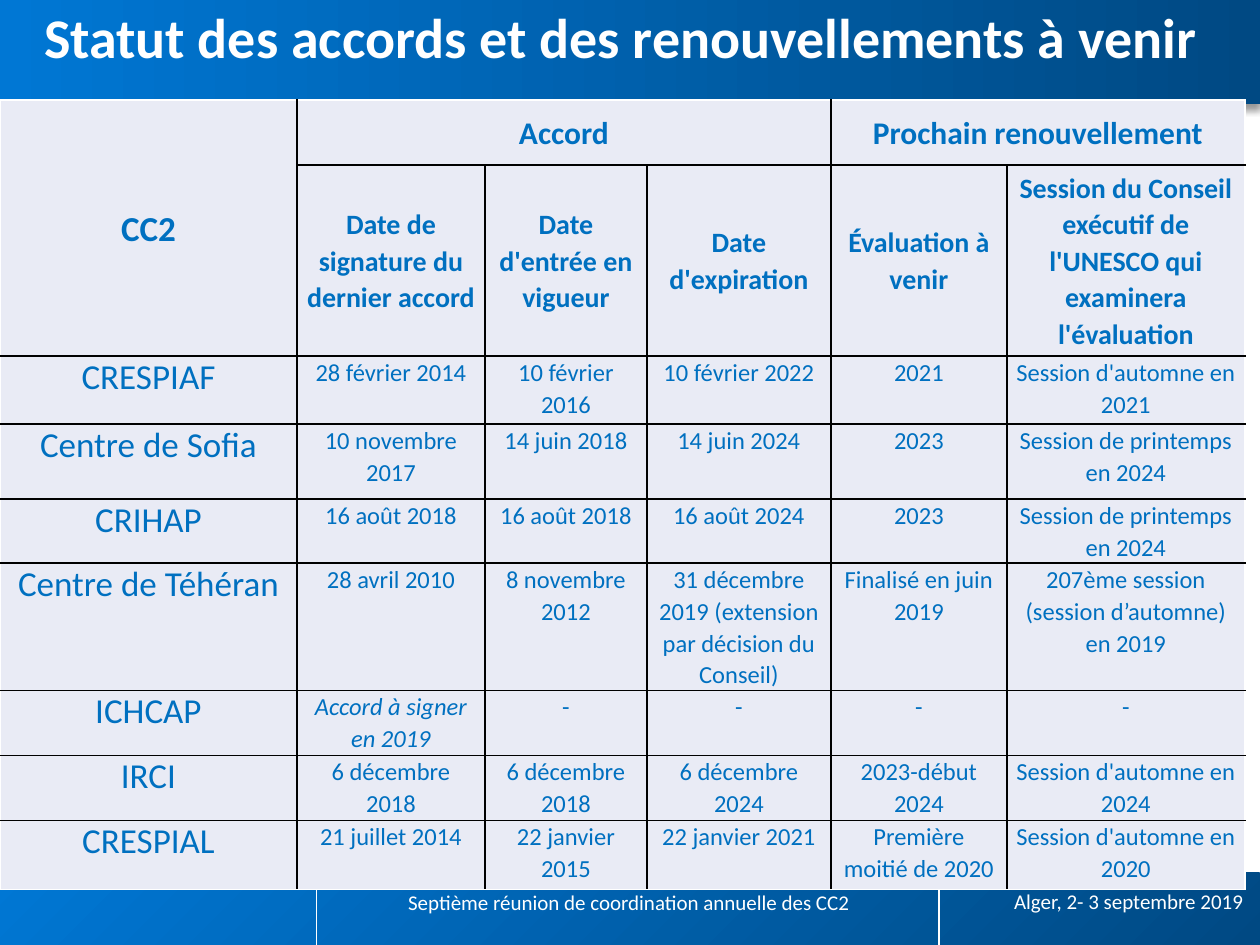
"""Build the slide on the status of agreements and coming renewals."""
from lxml import etree
from pptx import Presentation
from pptx.dml.color import RGBColor
from pptx.enum.shapes import MSO_CONNECTOR as Connector, MSO_SHAPE as Shape
from pptx.enum.text import MSO_ANCHOR as Anchor, MSO_AUTO_SIZE as AutoSize, PP_ALIGN as Align
from pptx.oxml import parse_xml
from pptx.oxml.ns import nsdecls, qn
from pptx.util import Pt

PX = 914400 // 126
FONT = "Calibri"
WHITE = RGBColor(0xFF, 0xFF, 0xFF)
BLACK = RGBColor(0x00, 0x00, 0x00)
BRIGHT_BLUE = RGBColor(0x00, 0x77, 0xD4)
DARK_BLUE = RGBColor(0x00, 0x49, 0x83)
TEXT_BLUE = RGBColor(0x00, 0x70, 0xC0)
CELL_FILL = RGBColor(0xE9, 0xEB, 0xF5)

COLUMN_WIDTHS = [297, 188, 162, 184, 176, 238]
ROW_HEIGHTS = [65, 191, 68, 75, 64, 127, 65, 65, 69]
ROWS = [
    ["CC2", "Accord", "", "", "Prochain renouvellement", ""],
    ["", "Date de signature du dernier accord", "Date d'entrée en vigueur", "Date d'expiration",
     "Évaluation à venir", "Session du Conseil exécutif de l'UNESCO qui examinera l'évaluation"],
    ["CRESPIAF", "28 février 2014", "10 février 2016", "10 février 2022", "2021",
     "Session d'automne en 2021"],
    ["Centre de Sofia", "10 novembre 2017", "14 juin 2018", "14 juin 2024", "2023",
     "Session de printemps en 2024"],
    ["CRIHAP", "16 août 2018", "16 août 2018", "16 août 2024", "2023",
     "Session de printemps en 2024"],
    ["Centre de Téhéran", "28 avril 2010", "8 novembre 2012",
     "31 décembre 2019 (extension par décision du Conseil)", "Finalisé en juin 2019",
     "207ème session (session d’automne) en 2019"],
    ["ICHCAP", "Accord à signer en 2019", "-", "-", "-", "-"],
    ["IRCI", "6 décembre 2018", "6 décembre 2018", "6 décembre 2024", "2023-début 2024",
     "Session d'automne en 2024"],
    ["CRESPIAL", "21 juillet 2014", "22 janvier 2015", "22 janvier 2021",
     "Première moitié de 2020", "Session d'automne en 2020"],
]
MERGES = [((0, 0), (1, 0)), ((0, 1), (0, 3)), ((0, 4), (0, 5))]


def fill_placeholder(shape, text, box, size, align):
    """Place a placeholder and return its only paragraph, formatted."""
    shape.left, shape.top, shape.width, shape.height = [value * PX for value in box]
    frame = shape.text_frame
    frame.text = text
    frame.word_wrap = True
    frame.auto_size = AutoSize.NONE
    frame.vertical_anchor = Anchor.TOP
    paragraph = frame.paragraphs[0]
    paragraph.alignment = align
    paragraph.space_before = Pt(0)
    paragraph.font.name = FONT
    paragraph.font.size = Pt(size)
    paragraph.font.color.rgb = WHITE
    return paragraph


def set_border(cell, side, color):
    """Draw one edge of a table cell."""
    cell._tc.get_or_add_tcPr().append(parse_xml(
        f'<a:ln{side} {nsdecls("a")} w="12700"><a:solidFill><a:srgbClr val="{color}"/>'
        f'</a:solidFill></a:ln{side}>'))


presentation = Presentation()
presentation.slide_width = 1260 * PX
presentation.slide_height = 945 * PX
slide = presentation.slides.add_slide(presentation.slide_layouts[3])
shapes = slide.shapes
title, footer_event, footer_place = list(slide.placeholders)

bands = []
for top, height, start, end, angle in [
    (0, 104, BRIGHT_BLUE, DARK_BLUE, 0),
    (873, 72, DARK_BLUE, BRIGHT_BLUE, 135),
]:
    band = shapes.add_shape(Shape.RECTANGLE, 0, top * PX, 1260 * PX, height * PX)
    band.shadow.inherit = False
    band.line.fill.background()
    band.fill.gradient()
    band.fill.gradient_angle = angle
    for stop, color in zip(band.fill.gradient_stops, (start, end)):
        stop.color.rgb = color
    bands.append(band)
bands[0]._element.spPr.find(qn("a:effectLst")).append(parse_xml(
    f'<a:outerShdw {nsdecls("a")} blurRad="50800" dist="38100" dir="5400000">'
    '<a:srgbClr val="000000"><a:alpha val="40000"/></a:srgbClr></a:outerShdw>'))

dividers = []
for x, top, weight in [(316, 872, 0.5), (939, 869, 0.75)]:
    divider = shapes.add_connector(Connector.STRAIGHT, x * PX, top * PX, x * PX, 946 * PX)
    divider.line.color.rgb = WHITE
    divider.line.width = Pt(weight)
    etree.SubElement(divider._element.spPr, qn("a:effectLst"))
    dividers.append(divider)

for index, shape in enumerate(bands + dividers):
    shapes._spTree.insert(2 + index, shape._element)

heading = fill_placeholder(title, "Statut des accords et des renouvellements à venir",
                           (44, 21, 1173, 63), 32, Align.LEFT)
heading.font.bold = True
heading.line_spacing = Pt(27.8)
frame = title.text_frame
frame.margin_left = frame.margin_top = frame.margin_right = frame.margin_bottom = 0

graphic = shapes.add_table(len(ROWS), len(COLUMN_WIDTHS), 0, 100 * PX,
                           sum(COLUMN_WIDTHS) * PX, sum(ROW_HEIGHTS) * PX)
table = graphic.table
for column, width in zip(table.columns, COLUMN_WIDTHS):
    column.width = width * PX
for row, height in zip(table.rows, ROW_HEIGHTS):
    row.height = height * PX
for first, last in MERGES:
    table.cell(*first).merge(table.cell(*last))

for row, texts in enumerate(ROWS):
    for column, text in enumerate(texts):
        cell = table.cell(row, column)
        is_header = row < 2
        edges = {
            "L": column == 0,
            "R": column + cell.span_width == len(COLUMN_WIDTHS),
            "T": row == 0,
            "B": row == len(ROWS) - 1,
        }
        for side, is_outer in edges.items():
            set_border(cell, side, WHITE if is_outer else BLACK)
        cell.fill.solid()
        cell.fill.fore_color.rgb = CELL_FILL
        cell.margin_left = cell.margin_right = 8 * PX
        cell.margin_top = cell.margin_bottom = 0
        cell.vertical_anchor = Anchor.MIDDLE if is_header else Anchor.TOP
        if not text:
            continue
        cell.text = text
        paragraph = cell.text_frame.paragraphs[0]
        paragraph.alignment = Align.CENTER
        paragraph.line_spacing = 1.07 if is_header or column else 1.0
        font = paragraph.font
        font.name = FONT
        font.size = Pt(20 if column == 0 else 18 if row == 0 else 16 if row == 1 else 14)
        font.bold = is_header
        font.italic = text.startswith("Accord à signer")
        font.color.rgb = TEXT_BLUE

for shape, text, box, align in [
    (footer_event, "Septième réunion de coordination annuelle des CC2",
     (335, 886, 588, 44), Align.CENTER),
    (footer_place, "Alger, 2- 3 septembre 2019", (940, 885, 316, 44), Align.RIGHT),
]:
    paragraph = fill_placeholder(shape, text, box, 12, align)
    paragraph.line_spacing = 0.9
    properties = paragraph._p.get_or_add_pPr()
    properties.set("marL", "0")
    properties.set("indent", "0")
    properties.insert_element_before(parse_xml(f'<a:buNone {nsdecls("a")}/>'),
                                     "a:tabLst", "a:defRPr", "a:extLst")
    shapes._spTree.append(shape._element)

presentation.save("out.pptx")
